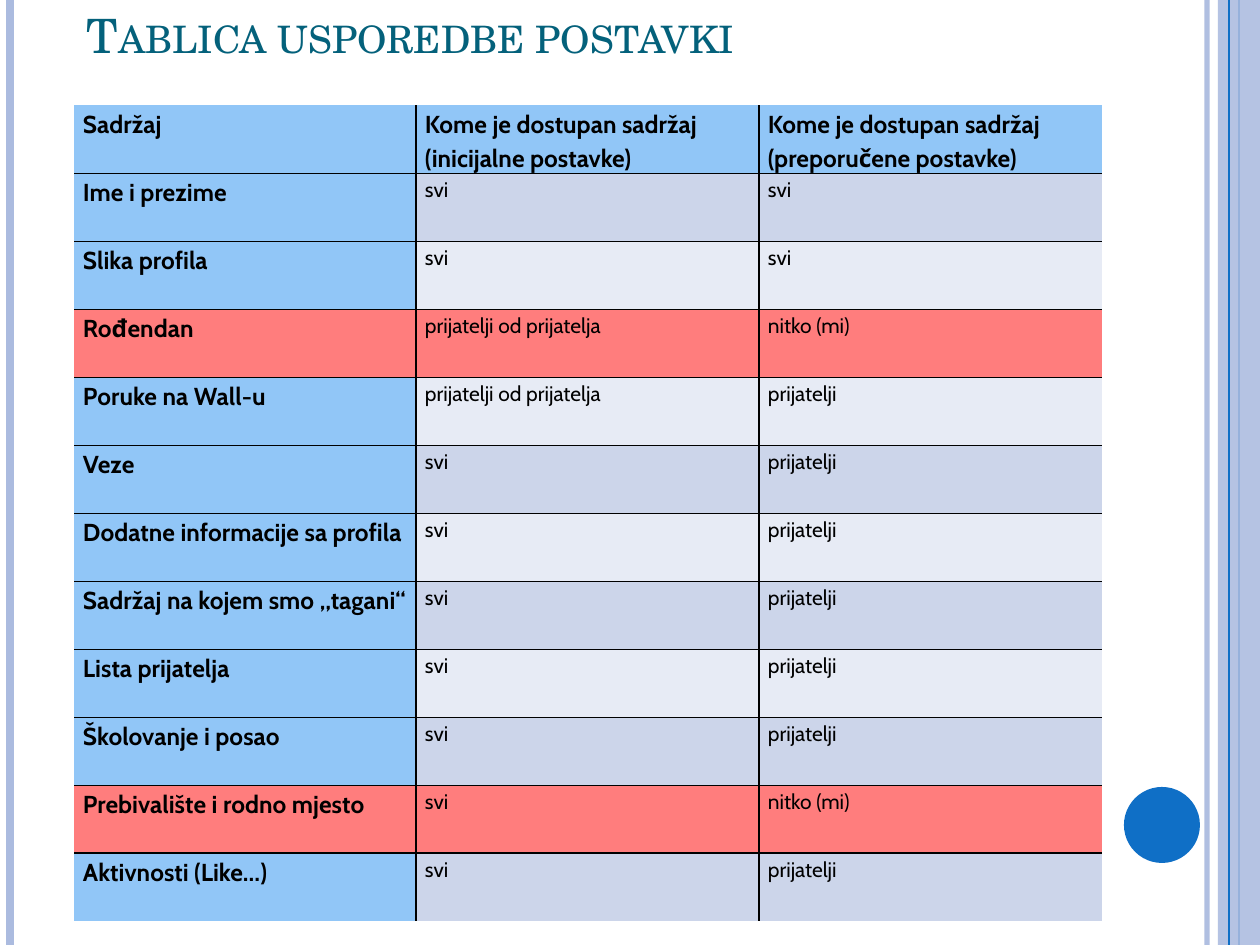
from lxml import etree
from pptx import Presentation
from pptx.dml.color import RGBColor
from pptx.enum import shapes, text
from pptx.oxml.ns import qn
from pptx import util as u

PX = 914400 / 126
BLACK = RGBColor(0x00, 0x00, 0x00)
TEAL = RGBColor(0x04, 0x61, 0x7B)
BLUE = RGBColor(0x0F, 0x6F, 0xC6)
LAVENDER = RGBColor(0xAB, 0xBB, 0xDF)
SKY = RGBColor(0x91, 0xC6, 0xF7)
RED = RGBColor(0xFF, 0x7D, 0x7D)
BANDS = [RGBColor(0xCC, 0xD5, 0xEA), RGBColor(0xE7, 0xEB, 0xF5)]

TITLE = "Tablica usporedbe postavki"
ROWS = [
    ("Sadržaj", "Kome je dostupan sadržaj (inicijalne postavke)",
     "Kome je dostupan sadržaj (preporučene postavke)"),
    ("Ime i prezime", "svi", "svi"),
    ("Slika profila", "svi", "svi"),
    ("Rođendan", "prijatelji od prijatelja", "nitko (mi)"),
    ("Poruke na Wall-u", "prijatelji od prijatelja", "prijatelji"),
    ("Veze", "svi", "prijatelji"),
    ("Dodatne informacije sa profila", "svi", "prijatelji"),
    ("Sadržaj na kojem smo „tagani“", "svi", "prijatelji"),
    ("Lista prijatelja", "svi", "prijatelji"),
    ("Školovanje i posao", "svi", "prijatelji"),
    ("Prebivalište i rodno mjesto", "svi", "nitko (mi)"),
    ("Aktivnosti (Like…)", "svi", "prijatelji"),
]
COL_WIDTHS = [342, 343, 343]
ROW_HEIGHT = 68
HIDDEN = "nitko (mi)"  # rows with this setting are red


def px(n):
    return u.Emu(round(n * PX))


def write(tf, content, *, size, font, color, bold=False, spacing=None,
          align=text.PP_ALIGN.LEFT):
    p = tf.paragraphs[0]
    p.alignment, p.line_spacing = align, spacing
    r = p.add_run()
    r.text = content
    r.font.size, r.font.name, r.font.bold = u.Pt(size), font, bold
    r.font.color.rgb = color
    return r


def set_alpha(fill, percent):
    # the colour element is the only descendant srgbClr of the fill
    color = fill.find(".//" + qn("a:srgbClr"))
    etree.SubElement(color, qn("a:alpha"), val=str(percent * 1000))


def add_rule(x, color, width, alpha=None):
    line = slide.shapes.add_connector(
        shapes.MSO_CONNECTOR.STRAIGHT, px(x), 0, px(x), px(945))
    line.line.color.rgb, line.line.width = color, u.Pt(width)
    sp_pr = line._element.spPr
    etree.SubElement(sp_pr, qn("a:effectLst"))
    if alpha:
        set_alpha(sp_pr, alpha)


def add_filled(kind, x, y, w, h, color):
    sp = slide.shapes.add_shape(kind, px(x), px(y), px(w), px(h))
    sp.shadow.inherit = False
    sp.fill.solid()
    sp.fill.fore_color.rgb = color
    sp.line.fill.background()
    return sp


def set_borders(cell, **visible):
    tc_pr = cell._tc.get_or_add_tcPr()
    for side, shown in visible.items():
        ln = etree.SubElement(tc_pr, qn("a:ln" + side), w=str(u.Pt(1)))
        if shown:
            fill = etree.SubElement(ln, qn("a:solidFill"))
            etree.SubElement(fill, qn("a:srgbClr"), val=str(BLACK))
        else:
            etree.SubElement(ln, qn("a:noFill"))


prs = Presentation()
prs.slide_width, prs.slide_height = u.Inches(10), u.Inches(7.5)
slide = prs.slides.add_slide(prs.slide_layouts[5])

# Side rules, right band and circle
add_rule(1207, LAVENDER, 3, alpha=93)
add_rule(10, LAVENDER, 4.5)
add_rule(1239, BLUE, 1.5)
band = add_filled(shapes.MSO_SHAPE.RECTANGLE, 1218, 0, 42, 945, LAVENDER)
set_alpha(band._element.spPr, 87)
add_rule(1229, BLUE, 0.75)
add_filled(shapes.MSO_SHAPE.OVAL, 1124, 787, 76, 76, BLUE)

# Title
title = slide.shapes.title
title.left, title.top, title.width, title.height = px(74), px(0), px(932), px(69)
title.text_frame.vertical_anchor = text.MSO_ANCHOR.BOTTOM
r = write(title.text_frame, TITLE, size=27, font="TeX Gyre Schola", color=TEAL)
r.font._element.set("cap", "small")

# Settings table, ruled on the inside only
table = slide.shapes.add_table(
    len(ROWS), len(COL_WIDTHS), px(74), px(105),
    px(sum(COL_WIDTHS)), px(ROW_HEIGHT * len(ROWS))).table
for column, width in zip(table.columns, COL_WIDTHS):
    column.width = px(width)
last_row, last_col = len(ROWS) - 1, len(COL_WIDTHS) - 1
for i, row in enumerate(ROWS):
    table.rows[i].height = px(ROW_HEIGHT)
    for j, content in enumerate(row):
        cell = table.cell(i, j)
        heading = i == 0 or j == 0
        cell.margin_left = cell.margin_right = px(9)
        cell.margin_top = cell.margin_bottom = 0
        set_borders(cell, L=j > 0, R=j < last_col, T=i > 0, B=i < last_row)
        cell.fill.solid()
        cell.fill.fore_color.rgb = (
            RED if HIDDEN in row else SKY if heading else BANDS[(i - 1) % 2])
        write(cell.text_frame, content, size=14 if heading else 12,
              font="Cabin", color=BLACK, bold=heading, spacing=1.15)

prs.save("out.pptx")
